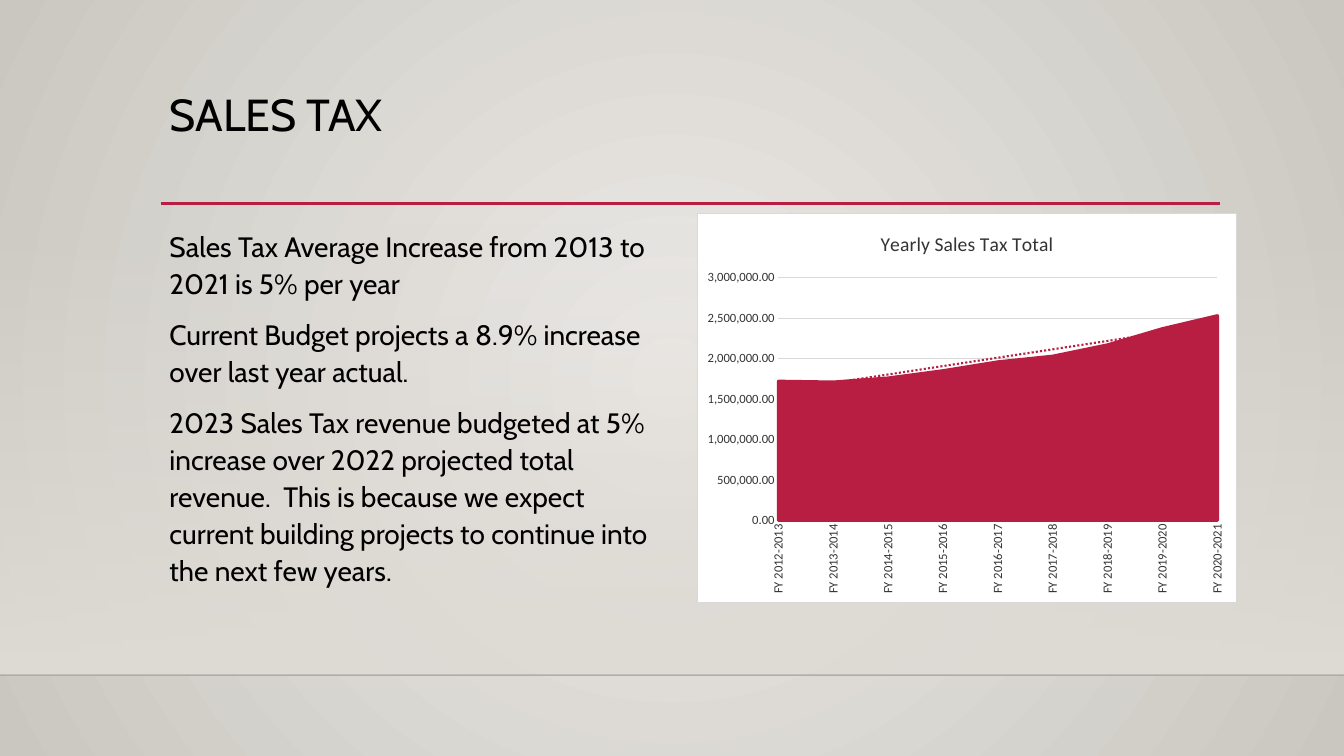
from dataclasses import dataclass

from lxml import etree
from pptx import Presentation
from pptx.chart.data import CategoryChartData
from pptx.dml.color import RGBColor
from pptx.enum.chart import XL_CHART_TYPE, XL_TICK_MARK
from pptx.enum.shapes import MSO_CONNECTOR, MSO_SHAPE
from pptx.enum.text import MSO_ANCHOR
from pptx.oxml import parse_xml
from pptx.oxml.ns import nsdecls, qn
from pptx.util import Emu, Pt

AREA = XL_CHART_TYPE.AREA
NO_TICK = XL_TICK_MARK.NONE
RECTANGLE = MSO_SHAPE.RECTANGLE
STRAIGHT = MSO_CONNECTOR.STRAIGHT
TOP = MSO_ANCHOR.TOP

EMU_PER_PX = 9525
SLIDE_WIDTH, SLIDE_HEIGHT = 1280, 720
FLOOR_TOP = 643
TEXT_FONT = "Cabin"
CHART_FONT = "Calibri"
COLORS = {
    "center": "ECEAE7",
    "edge": "CAC7C1",
    "wall": "DFDBD5",
    "floor_line": "000001",
    "accent": "B71E42",
    "text": "000000",
    "label": "333333",
    "grid": "D9D9D9",
    "white": "FFFFFF",
}


@dataclass
class Box:
    left: int
    top: int
    width: int
    height: int

    def emu(self) -> list[Emu]:
        return [px(n) for n in (self.left, self.top, self.width, self.height)]


@dataclass
class Rule:
    left: int
    right: int
    y: int
    color: str
    points: float
    opacity: int = 100


@dataclass
class TextBlock:
    box: Box
    size: int
    line_spacing: float
    space_before: int
    paragraphs: list[str]


RULES = [
    Rule(0, SLIDE_WIDTH, FLOOR_TOP, "floor_line", 1, 20),
    Rule(153, 1162, 194, "accent", 2.5),
]
TEXT_BLOCKS = [
    TextBlock(Box(152, 84, 1008, 111), 32, 0.9, 0, ["SALES TAX"]),
    TextBlock(Box(152, 211, 488, 362), 20, 1.1, 10, [
        "Sales Tax Average Increase from 2013 to 2021 is 5% per year",
        "Current Budget projects a 8.9% increase over last year actual.",
        "2023 Sales Tax revenue budgeted at 5% increase over 2022 projected total "
        "revenue.  This is because we expect current building projects to continue "
        "into the next few years.",
    ]),
]
WALL_BOX = Box(0, 212, SLIDE_WIDTH, FLOOR_TOP - 212)
CHART_BOX = Box(664, 203, 514, 371)
FIRST_YEAR = 2012
SALES_TAX = [1720000, 1710000, 1760000, 1850000, 1960000, 2030000, 2170000, 2370000, 2530000]
PLOT_LAYOUT = {"x": 0.15, "y": 0.165, "w": 0.815, "h": 0.625}


def px(length: int) -> Emu:
    return Emu(length * EMU_PER_PX)


def rgb(name: str) -> RGBColor:
    return RGBColor.from_string(COLORS[name])


def set_font(font, family: str, size: int, color: str) -> None:
    font.name = family
    font.size = Pt(size)
    font.color.rgb = rgb(color)


def set_line(line, color: str, points: float) -> None:
    line.color.rgb = rgb(color)
    line.width = Pt(points)


def replace_solid(element, stops: list[tuple[str, int]], direction: str) -> None:
    stop_xml = "".join(
        f'<a:gs pos="{index * 100000}"><a:srgbClr val="{COLORS[color]}">'
        f'<a:alpha val="{opacity * 1000}"/></a:srgbClr></a:gs>'
        for index, (color, opacity) in enumerate(stops)
    )
    gradient = parse_xml(
        f'<a:gradFill {nsdecls("a")} rotWithShape="1"><a:gsLst>{stop_xml}</a:gsLst>'
        f"{direction}</a:gradFill>"
    )
    solid = next(element.iter(qn("a:solidFill")))
    solid.getparent().replace(solid, gradient)


def draw_backdrop(slide) -> None:
    slide.background.fill.solid()
    replace_solid(
        slide.element,
        [("center", 100), ("edge", 100)],
        '<a:path path="circle"><a:fillToRect l="50000" t="50000" r="50000" b="50000"/></a:path>',
    )
    wall = slide.shapes.add_shape(RECTANGLE, *WALL_BOX.emu())
    wall.shadow.inherit = False
    wall.line.fill.background()
    wall.fill.solid()
    wall.fill.fore_color.rgb = rgb("wall")
    replace_solid(wall.element, [("wall", 0), ("wall", 100)], '<a:lin ang="5400000" scaled="0"/>')


def draw_rule(slide, rule: Rule) -> None:
    connector = slide.shapes.add_connector(
        STRAIGHT, px(rule.left), px(rule.y), px(rule.right), px(rule.y)
    )
    set_line(connector.line, rule.color, rule.points)
    if rule.opacity < 100:
        color = next(connector.element.iter(qn("a:srgbClr")))
        etree.SubElement(color, qn("a:alpha"), val=str(rule.opacity * 1000))
    etree.SubElement(connector.element.spPr, qn("a:effectLst"))


def draw_text(slide, block: TextBlock) -> None:
    frame = slide.shapes.add_textbox(*block.box.emu()).text_frame
    frame.word_wrap = True
    frame.vertical_anchor = TOP
    for index, text in enumerate(block.paragraphs):
        paragraph = frame.add_paragraph() if index else frame.paragraphs[0]
        paragraph.line_spacing = block.line_spacing
        paragraph.space_before = Pt(block.space_before if index else 0)
        run = paragraph.add_run()
        run.text = text
        set_font(run.font, TEXT_FONT, block.size, "text")


def line_xml(color: str, points: float, dash: str = "solid") -> str:
    return (
        f'<a:ln w="{Pt(points)}"><a:solidFill><a:srgbClr val="{COLORS[color]}"/></a:solidFill>'
        f'<a:prstDash val="{dash}"/></a:ln>'
    )


def style_axes(chart) -> None:
    for axis in (chart.category_axis, chart.value_axis):
        axis.major_tick_mark = axis.minor_tick_mark = NO_TICK
        set_font(axis.tick_labels.font, CHART_FONT, 9, "label")
    years = chart.category_axis
    years.has_major_gridlines = False
    set_line(years.format.line, "grid", 0.75)
    next(years._element.iter(qn("a:bodyPr"))).set("rot", "-5400000")
    amounts = chart.value_axis
    amounts.minimum_scale, amounts.maximum_scale, amounts.major_unit = 0, 3000000, 500000
    amounts.tick_labels.number_format = "#,##0.00"
    amounts.tick_labels.number_format_is_linked = False
    amounts.format.line.fill.background()
    set_line(amounts.major_gridlines.format.line, "grid", 0.75)
    amounts._element.find(qn("c:crossBetween")).set("val", "midCat")


def draw_chart(slide) -> None:
    data = CategoryChartData()
    data.categories = [
        f"FY {year}-{year + 1}" for year in range(FIRST_YEAR, FIRST_YEAR + len(SALES_TAX))
    ]
    data.add_series("Series 1", SALES_TAX)
    chart = slide.shapes.add_chart(AREA, *CHART_BOX.emu(), data).chart
    set_font(chart.font, CHART_FONT, 10, "text")
    chart.has_legend = False
    chart.has_title = True
    title = chart.chart_title.text_frame.paragraphs[0].add_run()
    title.text = "Yearly Sales Tax Total"
    set_font(title.font, CHART_FONT, 14, "label")
    title.font.bold = False
    style_axes(chart)

    plot = chart.plots[0]
    plot.vary_by_categories = False
    series = plot.series[0]
    series.format.fill.solid()
    series.format.fill.fore_color.rgb = rgb("accent")
    set_line(series.format.line, "accent", 2.25)
    series._element.find(qn("c:cat")).addprevious(parse_xml(
        f'<c:trendline {nsdecls("c", "a")}><c:spPr>{line_xml("accent", 1.5, "sysDot")}</c:spPr>'
        '<c:trendlineType val="linear"/><c:dispRSqr val="0"/><c:dispEq val="0"/></c:trendline>'
    ))

    chart_element = chart._chartSpace.find(qn("c:chart"))
    chart_element.addnext(parse_xml(
        f'<c:spPr {nsdecls("c", "a")}><a:solidFill><a:srgbClr val="{COLORS["white"]}"/>'
        f'</a:solidFill>{line_xml("grid", 0.75)}</c:spPr>'
    ))
    plot_area = chart_element.find(qn("c:plotArea"))
    for layout in plot_area.findall(qn("c:layout")):
        plot_area.remove(layout)
    modes = "".join(f'<c:{key}Mode val="edge"/>' for key in "xy")
    places = "".join(f'<c:{key} val="{value}"/>' for key, value in PLOT_LAYOUT.items())
    plot_area.insert(0, parse_xml(
        f'<c:layout {nsdecls("c")}><c:manualLayout><c:layoutTarget val="inner"/>'
        f"{modes}{places}</c:manualLayout></c:layout>"
    ))


def main() -> None:
    presentation = Presentation()
    presentation.slide_width = px(SLIDE_WIDTH)
    presentation.slide_height = px(SLIDE_HEIGHT)
    slide = presentation.slides.add_slide(presentation.slide_layouts[6])
    draw_backdrop(slide)
    for rule in RULES:
        draw_rule(slide, rule)
    for block in TEXT_BLOCKS:
        draw_text(slide, block)
    draw_chart(slide)
    presentation.save("out.pptx")


if __name__ == "__main__":
    main()
